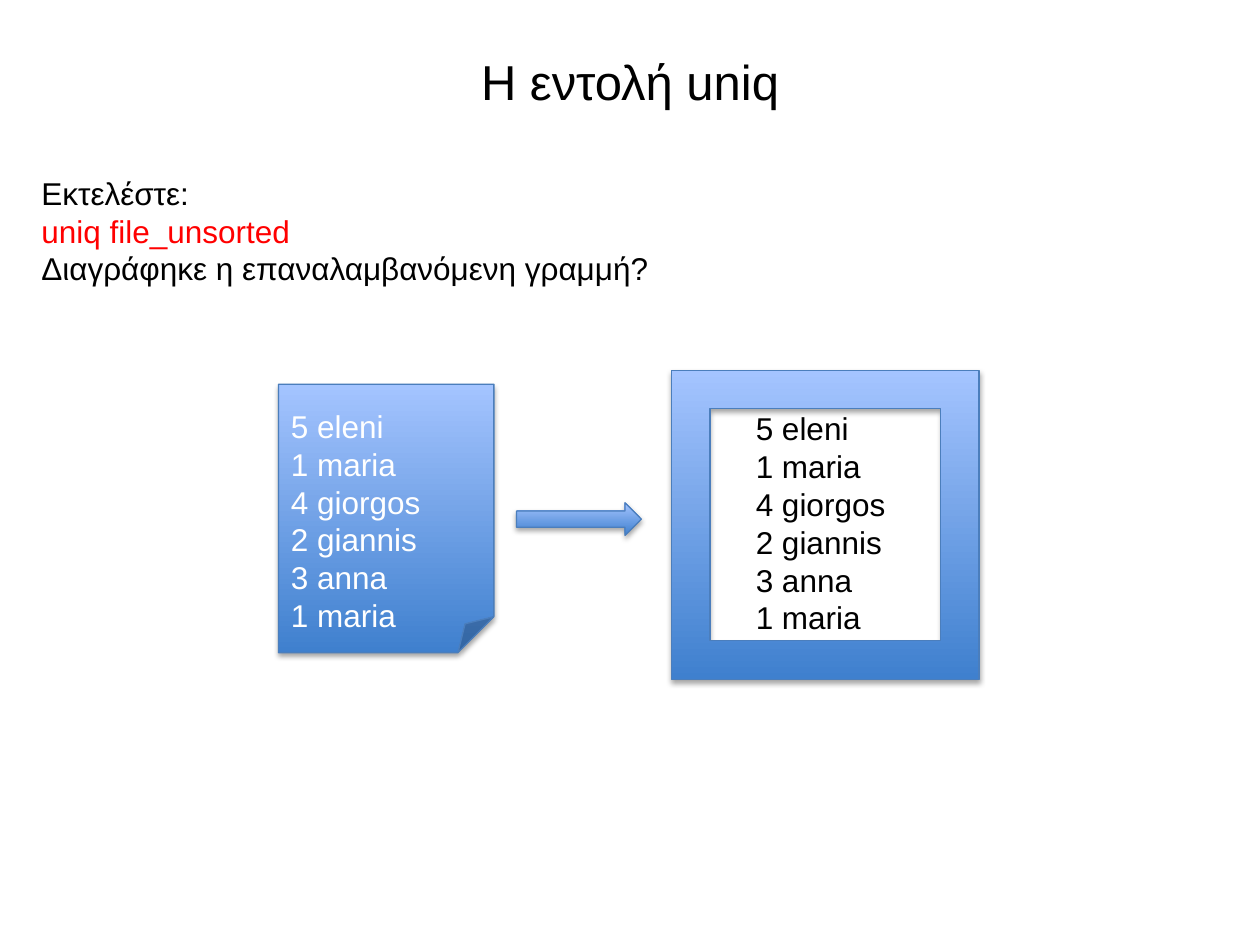
from lxml import etree
from pptx import Presentation
from pptx.dml.color import RGBColor
from pptx.enum.shapes import MSO_SHAPE
from pptx.enum.text import MSO_ANCHOR, PP_ALIGN
from pptx.oxml.ns import qn
from pptx.util import Inches, Pt

FOLDED, ARROW, FRAME = MSO_SHAPE.FOLDED_CORNER, MSO_SHAPE.RIGHT_ARROW, MSO_SHAPE.FRAME
TOP, MIDDLE = MSO_ANCHOR.TOP, MSO_ANCHOR.MIDDLE
LEFT, CENTER = PP_ALIGN.LEFT, PP_ALIGN.CENTER

COLORS = {"black": "000000", "white": "FFFFFF", "red": "FF0000",
          "dark": "3F80CE", "light": "A4C4FF", "outline": "4B7EBC"}
FILE_LINES = ["5 eleni", "1 maria", "4 giorgos", "2 giannis", "3 anna", "1 maria"]


def rgb(name):
    return RGBColor.from_string(COLORS[name])


def write(tf, lines, size=18, color="black", align=LEFT, anchor=TOP, wrap=True, accents=None):
    """Fill a text frame; accents maps a line index to its own colour."""
    tf.word_wrap = wrap
    tf.vertical_anchor = anchor
    for i, line in enumerate(lines):
        p = tf.paragraphs[0] if i == 0 else tf.add_paragraph()
        p.alignment = align
        r = p.add_run()
        r.text = line
        r.font.name = "Arial"
        r.font.size = Pt(size)
        r.font.color.rgb = rgb((accents or {}).get(i, color))


class Deck:
    """Current slide and the glossy blue style of its shapes."""

    def __init__(self, prs):
        self.slide = prs.slides.add_slide(prs.slide_layouts[6])

    def text(self, box, lines, **fmt):
        s = self.slide.shapes.add_textbox(*map(Inches, box))
        write(s.text_frame, lines, **fmt)
        return s

    def shape(self, kind, box):
        s = self.slide.shapes.add_shape(kind, *map(Inches, box))
        s.fill.gradient()
        s.fill.gradient_angle = 90
        for stop, name in zip(s.fill.gradient_stops, ("dark", "light")):
            stop.color.rgb = rgb(name)
        s.line.color.rgb = rgb("outline")
        s.line.width = Pt(0.75)
        self.shadow(s)
        return s

    def shadow(self, s):
        s.shadow.inherit = False
        effects = s._element.spPr.find(qn("a:effectLst"))
        outer = etree.SubElement(effects, qn("a:outerShdw"), blurRad=str(Pt(3.1)),
                                 dist=str(Pt(1.8)), dir="5400000", rotWithShape="0")
        color = etree.SubElement(outer, qn("a:srgbClr"), val=COLORS["black"])
        etree.SubElement(color, qn("a:alpha"), val="35000")


def main():
    prs = Presentation()
    prs.slide_width, prs.slide_height = Inches(10), Inches(7.5)
    deck = Deck(prs)

    deck.text((0.5, 0.3, 9, 0.68), ["Η εντολή uniq"], size=28, align=CENTER, anchor=MIDDLE)
    deck.text((0.23, 1.33, 9.61, 1.62),
              ["Εκτελέστε:", "uniq file_unsorted", "Διαγράφηκε η επαναλαμβανόμενη γραμμή?"],
              accents={1: "red"})

    note = deck.shape(FOLDED, (2.21, 3.05, 1.71, 2.13))
    note.text_frame.margin_top = Inches(0.18)
    note.text_frame.margin_bottom = 0
    write(note.text_frame, FILE_LINES, color="white")

    deck.shape(ARROW, (4.1, 3.99, 0.99, 0.26))
    deck.shape(FRAME, (5.33, 2.94, 2.44, 2.45))
    deck.text((5.9, 3.2, 1.24, 2.22), FILE_LINES, wrap=False)

    prs.save("out.pptx")


if __name__ == "__main__":
    main()
